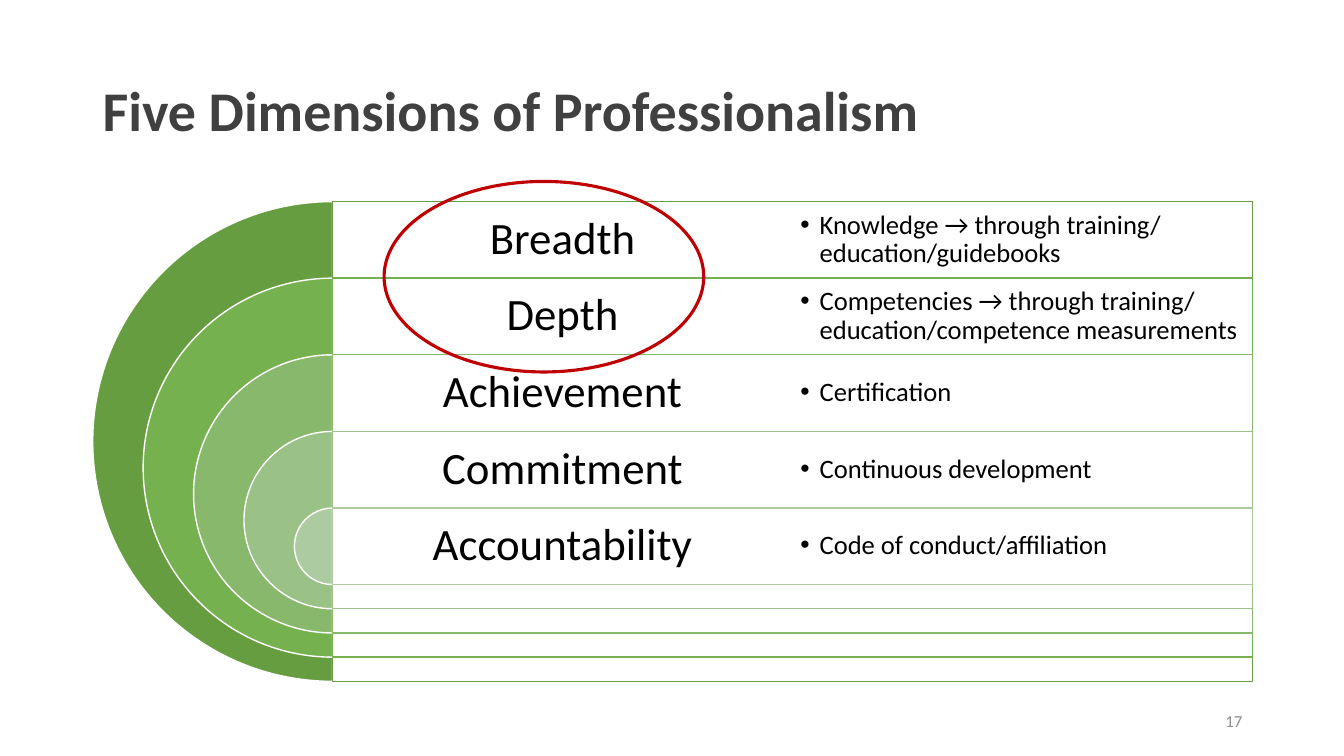
from dataclasses import dataclass

from lxml import etree
from pptx import Presentation, util as u
from pptx.dml.color import RGBColor
from pptx.enum import shapes, text
from pptx.oxml.ns import qn


@dataclass(frozen=True)
class Theme:
    font: str = "Calibri"
    title: str = "404041"
    body: str = "000000"
    muted: str = "8C8C8C"
    white: str = "FFFFFF"
    accent: str = "C00000"
    title_pt: float = 40
    name_pt: float = 32
    detail_pt: float = 19
    number_pt: float = 12


@dataclass(frozen=True)
class Box:
    left: float
    top: float
    width: float
    height: float

    def lengths(self) -> list[int]:
        return [u.Inches(v) for v in (self.left, self.top, self.width, self.height)]


@dataclass(frozen=True)
class Dimension:
    name: str
    detail: str
    color: str


T = Theme()
DIMENSIONS = [
    Dimension("Breadth", "Knowledge → through training/ education/guidebooks", "669D40"),
    Dimension("Depth", "Competencies → through training/ education/competence measurements",
              "75B14F"),
    Dimension("Achievement", "Certification", "87B86B"),
    Dimension("Commitment", "Continuous development", "9AC186"),
    Dimension("Accountability", "Code of conduct/affiliation", "ADCBA0"),
]
LEFT, TOP, OUTER = 0.92, 2.0, 4.76
ROW = 0.76
CENTER = LEFT + OUTER / 2
COLUMN = 4.56


def add_shape(s, kind, box: Box, line: str, line_pt: float = 1, fill: str | None = None):
    sp = s.shapes.add_shape(kind, *box.lengths())
    sp.shadow.inherit = False
    if fill:
        sp.fill.solid()
        sp.fill.fore_color.rgb = RGBColor.from_string(fill)
    else:
        sp.fill.background()
    sp.line.color.rgb = RGBColor.from_string(line)
    sp.line.width = u.Pt(line_pt)
    return sp


def set_opacity(sp, percent: int) -> None:
    color = sp._element.spPr.find(qn("a:solidFill"))[0]
    etree.SubElement(color, qn("a:alpha"), val=str(percent * 1000))


def add_bullet(p, indent: float) -> None:
    pPr = p._p.get_or_add_pPr()
    pPr.set("marL", str(u.Inches(indent)))
    pPr.set("indent", str(-u.Inches(indent)))
    etree.SubElement(pPr, qn("a:buFont"), typeface="Arial")
    etree.SubElement(pPr, qn("a:buChar"), char="•")


def add_text(s, box: Box, words: str, size: float, color: str, align=text.PP_ALIGN.LEFT,
             inset: float | None = None, bold: bool = False, spacing: float = 0.9,
             bullet: bool = False) -> None:
    tf = s.shapes.add_textbox(*box.lengths()).text_frame
    frame = {"word_wrap": True, "vertical_anchor": text.MSO_ANCHOR.MIDDLE}
    if inset is not None:
        sides = ("left", "top", "right", "bottom")
        frame |= {f"margin_{side}": u.Inches(inset) for side in sides}
    for key, value in frame.items():
        setattr(tf, key, value)
    p = tf.paragraphs[0]
    p.alignment, p.line_spacing = align, spacing
    if bullet:
        add_bullet(p, 0.19)
    r = p.add_run()
    r.text = words
    for key, value in {"name": T.font, "size": u.Pt(size), "bold": bold}.items():
        setattr(r.font, key, value)
    r.font.color.rgb = RGBColor.from_string(color)


def add_layer(s, i: int, d: Dimension) -> None:
    """Draw one half disc with its panel and name; all layers share a vertical axis."""
    top, size = TOP + i * ROW, OUTER - i
    pie = add_shape(s, shapes.MSO_SHAPE.PIE, Box(CENTER - size / 2, top, size, size),
                    T.white, fill=d.color)
    pie.adjustments[0], pie.adjustments[1] = 54, 162  # 90° to 270°
    panel = add_shape(s, shapes.MSO_SHAPE.RECTANGLE, Box(CENTER, top, 2 * COLUMN, size),
                      d.color, fill=T.white)
    set_opacity(panel, 90)
    add_text(s, Box(CENTER, top, COLUMN, ROW), d.name, T.name_pt, T.body,
             text.PP_ALIGN.CENTER, inset=0.13)


def main() -> None:
    prs = Presentation()
    prs.slide_width, prs.slide_height = u.Inches(13.33), u.Inches(7.5)
    s = prs.slides.add_slide(prs.slide_layouts[6])
    add_text(s, Box(LEFT, 0.4, 11.5, 1.45), "Five Dimensions of Professionalism",
             T.title_pt, T.title, bold=True)
    add_text(s, Box(9.42, 6.95, 3, 0.4), "17", T.number_pt, T.muted,
             text.PP_ALIGN.RIGHT, spacing=1.0)
    for i, d in enumerate(DIMENSIONS):
        add_layer(s, i, d)
    for i, d in enumerate(DIMENSIONS):
        add_text(s, Box(CENTER + COLUMN, TOP + i * ROW, COLUMN, ROW), d.detail,
                 T.detail_pt, T.body, inset=0.08, bullet=True)
    add_shape(s, shapes.MSO_SHAPE.OVAL, Box(3.81, 1.8, 3.17, 1.89), T.accent, 2.25)
    prs.save("out.pptx")


if __name__ == "__main__":
    main()
